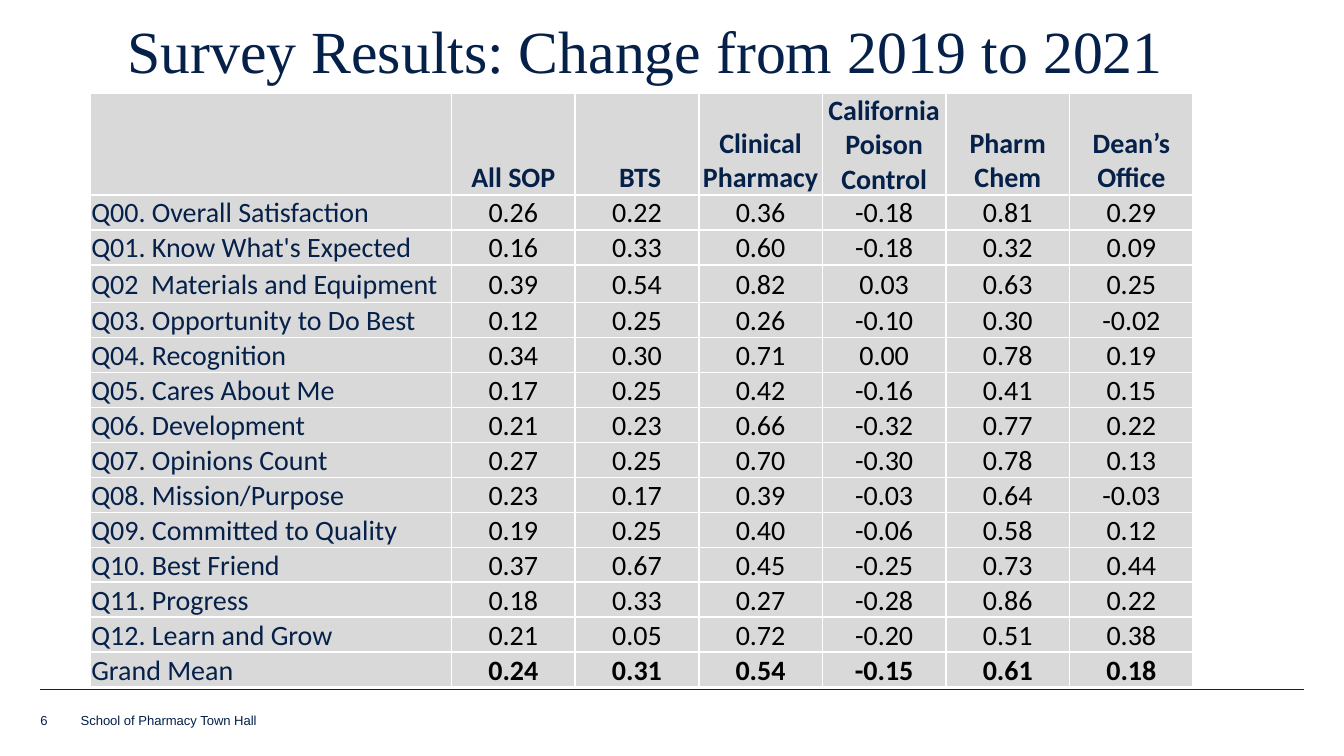
from lxml.etree import SubElement
from pptx import Presentation
from pptx.dml.color import RGBColor
from pptx.enum.shapes import MSO_CONNECTOR
from pptx.enum.text import MSO_ANCHOR, PP_ALIGN
from pptx.oxml.ns import qn
from pptx.util import Inches, Pt

NAVY = RGBColor(0x05, 0x20, 0x49)
BLACK = RGBColor(0, 0, 0)
GRAY = RGBColor(0xD9, 0xD9, 0xD9)
WHITE = RGBColor(0xFF, 0xFF, 0xFF)

# Content
TITLE = "Survey Results: Change from 2019 to 2021"
FOOTER = "School of Pharmacy Town Hall"
PAGE_NUMBER = "6"
HEADINGS = ["", "All SOP", " BTS", "Clinical Pharmacy",
            "California Poison Control", "Pharm Chem", "Dean’s Office"]
SCORES = [
    ("Q00. Overall Satisfaction", "0.26", "0.22", "0.36", "-0.18", "0.81", "0.29"),
    ("Q01. Know What's Expected", "0.16", "0.33", "0.60", "-0.18", "0.32", "0.09"),
    ("Q02  Materials and Equipment", "0.39", "0.54", "0.82", "0.03", "0.63", "0.25"),
    ("Q03. Opportunity to Do Best", "0.12", "0.25", "0.26", "-0.10", "0.30", "-0.02"),
    ("Q04. Recognition", "0.34", "0.30", "0.71", "0.00", "0.78", "0.19"),
    ("Q05. Cares About Me", "0.17", "0.25", "0.42", "-0.16", "0.41", "0.15"),
    ("Q06. Development", "0.21", "0.23", "0.66", "-0.32", "0.77", "0.22"),
    ("Q07. Opinions Count", "0.27", "0.25", "0.70", "-0.30", "0.78", "0.13"),
    ("Q08. Mission/Purpose", "0.23", "0.17", "0.39", "-0.03", "0.64", "-0.03"),
    ("Q09. Committed to Quality", "0.19", "0.25", "0.40", "-0.06", "0.58", "0.12"),
    ("Q10. Best Friend", "0.37", "0.67", "0.45", "-0.25", "0.73", "0.44"),
    ("Q11. Progress", "0.18", "0.33", "0.27", "-0.28", "0.86", "0.22"),
    ("Q12. Learn and Grow", "0.21", "0.05", "0.72", "-0.20", "0.51", "0.38"),
    ("Grand Mean", "0.24", "0.31", "0.54", "-0.15", "0.61", "0.18"),
]
SCORES_BOX = (0.67, 0.69, 8.19, 4.42)
COLUMN_WIDTHS = [2.69] + [0.92] * 6
ROW_HEIGHTS = [0.49, 0.25, 0.26, 0.28] + [0.25] * 11
RULE_Y = 5.13
RULE_SPANS = [(0.4, 9.6), (0.3, 9.7)]


def add_run(paragraph, text, font_name, size, color, bold=False):
    run = paragraph.add_run()
    run.text = text
    font = run.font
    font.name, font.size, font.bold = font_name, Pt(size), bold
    font.color.rgb = color


def add_text(slide, text, box, font_name, size, inset=(0, 0)):
    frame = slide.shapes.add_textbox(*map(Inches, box)).text_frame
    frame.word_wrap = True
    frame.vertical_anchor = MSO_ANCHOR.BOTTOM
    frame.margin_left = frame.margin_right = Inches(inset[0])
    frame.margin_top = frame.margin_bottom = Inches(inset[1])
    paragraph = frame.paragraphs[0]
    add_run(paragraph, text, font_name, size, NAVY)
    return paragraph


def add_borders(cell):
    properties = cell._tc.get_or_add_tcPr()
    for position, side in enumerate(("lnL", "lnR", "lnT", "lnB")):
        border = properties.makeelement(qn(f"a:{side}"), {"w": str(Pt(1))})
        fill = SubElement(border, qn("a:solidFill"))
        SubElement(fill, qn("a:srgbClr"), val=str(WHITE))
        properties.insert(position, border)


def add_scores(slide):
    rows = [HEADINGS, *SCORES]
    scores = slide.shapes.add_table(
        len(rows), len(HEADINGS), *map(Inches, SCORES_BOX))
    table = scores.table
    for column, width in zip(table.columns, COLUMN_WIDTHS):
        column.width = Inches(width)
    for row, height in zip(table.rows, ROW_HEIGHTS):
        row.height = Inches(height)
    # The frame is taller than the minimum row heights, so rows stretch
    scores.width, scores.height = map(Inches, SCORES_BOX[2:])

    for r, values in enumerate(rows):
        for c, value in enumerate(values):
            cell = table.cell(r, c)
            cell.fill.solid()
            cell.fill.fore_color.rgb = GRAY
            add_borders(cell)
            cell.vertical_anchor = MSO_ANCHOR.BOTTOM
            cell.margin_left = cell.margin_right = cell.margin_top = Inches(0.01)
            cell.margin_bottom = 0
            if not value:
                continue
            is_heading, is_label = r == 0, c == 0
            is_mean = r == len(rows) - 1 and not is_label
            paragraph = cell.text_frame.paragraphs[0]
            paragraph.alignment = PP_ALIGN.LEFT if is_label else PP_ALIGN.CENTER
            add_run(paragraph, value, "Calibri", 15,
                    NAVY if is_heading or is_label else BLACK,
                    is_heading or is_mean)


def main():
    deck = Presentation()
    deck.slide_width = Inches(10)
    deck.slide_height = deck.slide_width * 9 // 16
    slide = deck.slides.add_slide(deck.slide_layouts[6])

    # Footer rules, behind the table
    for start, end in RULE_SPANS:
        rule = slide.shapes.add_connector(
            MSO_CONNECTOR.STRAIGHT, Inches(start), Inches(RULE_Y),
            Inches(end), Inches(RULE_Y))
        rule.line.color.rgb = NAVY
        rule.line.width = Pt(0.25)
        SubElement(rule._element.spPr, qn("a:effectLst"))

    # Title
    title = add_text(slide, TITLE, (0.85, 0.19, 8.48, 0.5),
                     "Times New Roman", 32, (0.1, 0.05))
    title.line_spacing = 0.85

    # Score table
    add_scores(slide)

    # Footer and page number
    add_text(slide, FOOTER, (0.6, 5.31, 4.71, 0.11), "Arial", 7)
    add_text(slide, PAGE_NUMBER, (0.3, 5.29, 0.27, 0.13), "Arial", 7)

    deck.save("out.pptx")


if __name__ == "__main__":
    main()
